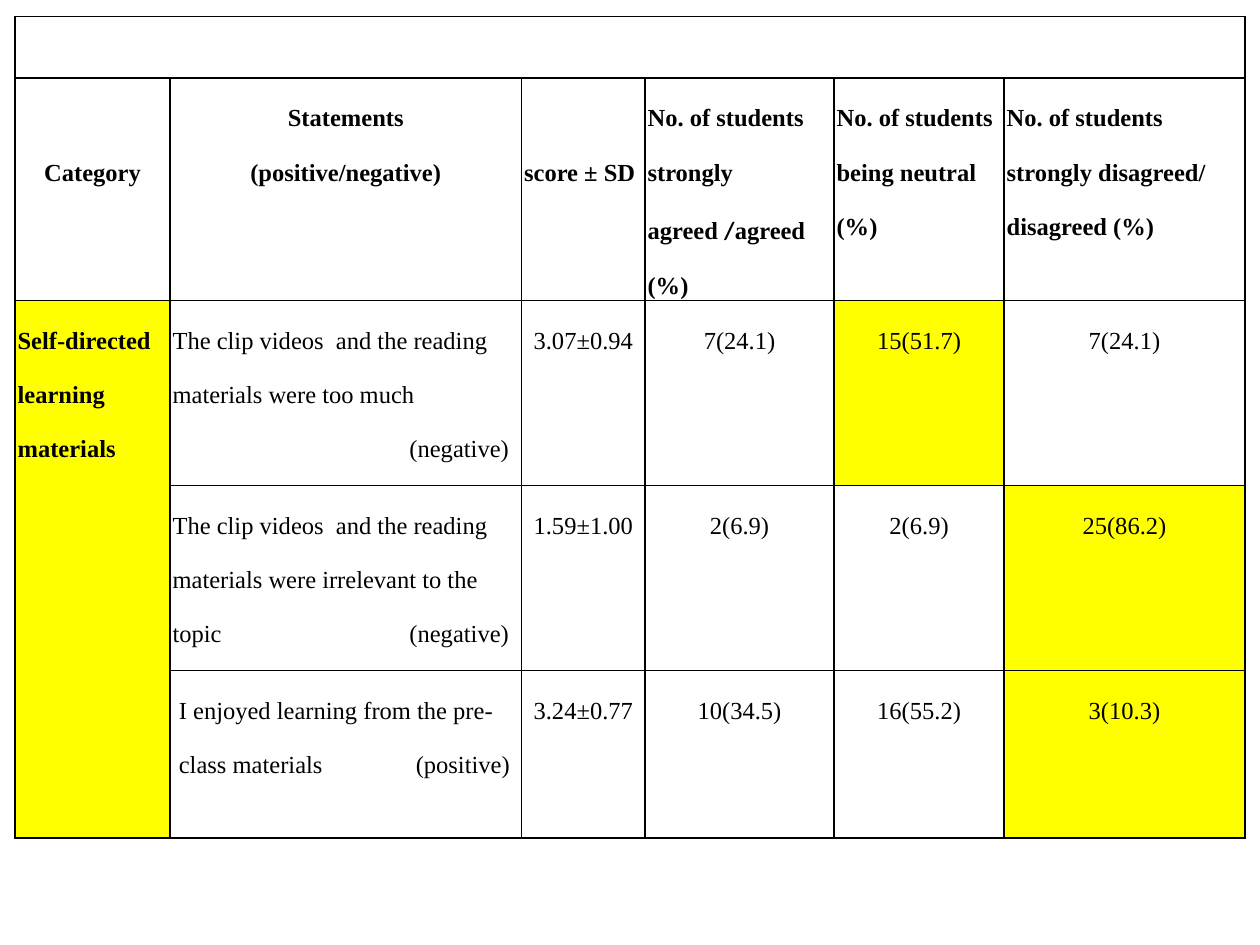
import pptx
import pptx.dml.color
import pptx.enum.text
import pptx.oxml.ns
import pptx.util
from lxml import etree

RGBColor = pptx.dml.color.RGBColor
Inches = pptx.util.Inches
LEFT = pptx.enum.text.PP_ALIGN.LEFT
CENTER = pptx.enum.text.PP_ALIGN.CENTER

BLACK = RGBColor(0, 0, 0)
WHITE = RGBColor(255, 255, 255)
YELLOW = RGBColor(255, 255, 0)

COLUMN_WIDTHS = [1.23, 2.79, 0.98, 1.5, 1.35, 1.91]
ROW_HEIGHTS = [0.49, 1.47, 1.47, 1.47, 1.33]
LINE_PITCH = 0.43
LABEL_STOP = 1.88

HEADERS = [
    (["Category"], CENTER, LINE_PITCH),
    (["Statements", "(positive/negative)"], CENTER, 0),
    (["score ± SD"], LEFT, LINE_PITCH),
    (["No. of students strongly agreed /agreed (%)"], LEFT, 0),
    (["No. of students", "being neutral (%)"], LEFT, 0),
    (["No. of students strongly disagreed/ disagreed (%)"], LEFT, 0),
]
STATEMENTS = [
    ["The clip videos  and the reading materials were too much", "\t(negative)"],
    ["The clip videos  and the reading materials were irrelevant to the topic\t(negative)"],
    ["I enjoyed learning from the pre-class materials\t(positive)"],
]
RESULTS = [
    ["3.07±0.94", "7(24.1)", "15(51.7)", "7(24.1)"],
    ["1.59±1.00", "2(6.9)", "2(6.9)", "25(86.2)"],
    ["3.24±0.77", "10(34.5)", "16(55.2)", "3(10.3)"],
]
SIDE_MARGINS = [0.02, 0.02, 0.07]
HIGHLIGHTS = {(2, 4), (3, 5), (4, 5)}


class SlideBuilder:
    font = "Times New Roman"
    size = pptx.util.Pt(14)
    border_width = pptx.util.Pt(1)

    def __init__(self, page):
        self.page = page

    def table(self, left, top, widths, heights):
        frame = self.page.shapes.add_table(
            len(heights), len(widths), Inches(left), Inches(top),
            Inches(sum(widths)), Inches(sum(heights)))
        table = frame.table
        table.first_row = False
        table.horz_banding = False
        for column, width in zip(table.columns, widths):
            column.width = Inches(width)
        for row, height in zip(table.rows, heights):
            row.height = Inches(height)
        for cell in table.iter_cells():
            self.borders(cell)
            self.fill(cell, WHITE)
        return table

    def borders(self, cell):
        qn = pptx.oxml.ns.qn
        properties = cell._tc.get_or_add_tcPr()
        for side in ("a:lnL", "a:lnR", "a:lnT", "a:lnB"):
            line = etree.SubElement(properties, qn(side), w=str(self.border_width))
            solid = etree.SubElement(line, qn("a:solidFill"))
            etree.SubElement(solid, qn("a:srgbClr"), val=str(BLACK))

    def fill(self, cell, color):
        cell.fill.solid()
        cell.fill.fore_color.rgb = color

    def text(self, cell, lines, align=LEFT, bold=False, side=0.02, top=0):
        cell.margin_left = cell.margin_right = Inches(side)
        cell.margin_top = Inches(top)
        cell.margin_bottom = 0
        cell.text_frame.text = "\n".join(lines)
        for para in cell.text_frame.paragraphs:
            para.alignment = align
            para.line_spacing = 2.0
            for span in para.runs:
                self.style(span, bold)

    def style(self, span, bold):
        span.font.name = self.font
        span.font.size = self.size
        span.font.bold = bold
        span.font.color.rgb = BLACK

    def slash_font(self, cell, font):
        para = cell.text_frame.paragraphs[0]
        before, after = para.text.split("/")
        para.text = before
        for part in ("/", after):
            para.add_run().text = part
        for span in para.runs:
            self.style(span, True)
        para.runs[1].font.name = font

    def tab_stop(self, cell, position):
        qn = pptx.oxml.ns.qn
        for para in cell.text_frame.paragraphs:
            stops = etree.SubElement(para._p.get_or_add_pPr(), qn("a:tabLst"))
            etree.SubElement(stops, qn("a:tab"), pos=str(Inches(position)), algn="l")


def main():
    deck = pptx.Presentation()
    deck.slide_width = Inches(10)
    deck.slide_height = Inches(7.5)
    builder = SlideBuilder(deck.slides.add_slide(deck.slide_layouts[6]))
    table = builder.table(0.12, 0.13, COLUMN_WIDTHS, ROW_HEIGHTS)

    table.cell(0, 0).merge(table.cell(0, 5))
    for column, (lines, align, top) in enumerate(HEADERS):
        builder.text(table.cell(1, column), lines, align, bold=True, top=top)
    builder.slash_font(table.cell(1, 3), "Calibri")

    category = table.cell(2, 0)
    category.merge(table.cell(4, 0))
    builder.text(category, ["Self-directed learning materials"], bold=True)
    builder.fill(category, YELLOW)

    answers = zip(STATEMENTS, RESULTS, SIDE_MARGINS)
    for row, (statement, results, side) in enumerate(answers, start=2):
        builder.text(table.cell(row, 1), statement, side=side)
        builder.tab_stop(table.cell(row, 1), LABEL_STOP)
        for column, result in enumerate(results, start=2):
            builder.text(table.cell(row, column), [result], CENTER, side=side)
    for row, column in HIGHLIGHTS:
        builder.fill(table.cell(row, column), YELLOW)

    deck.save("out.pptx")


if __name__ == "__main__":
    main()
